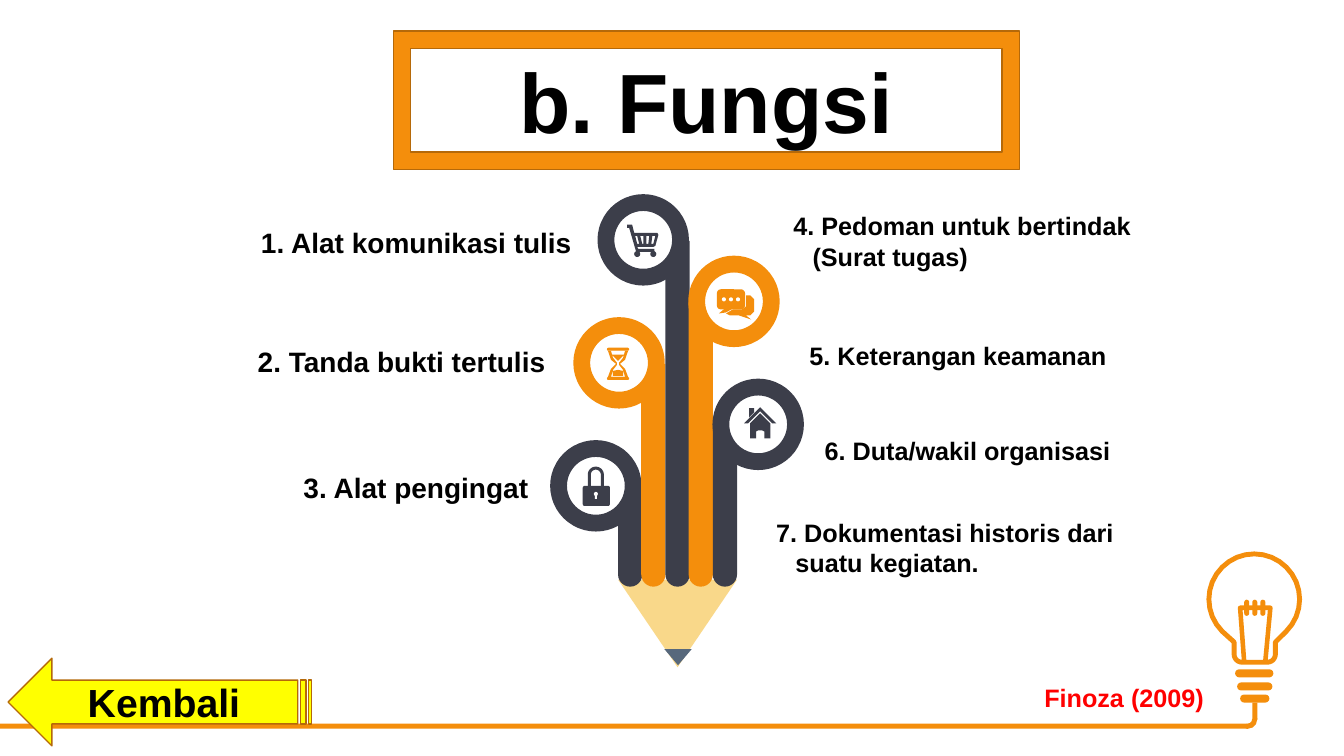
import math

import pptx
import pptx.dml.color
import pptx.enum.shapes
import pptx.enum.text
import pptx.oxml.ns
import pptx.util
from lxml import etree

RGB = pptx.dml.color.RGBColor
MSO = pptx.enum.shapes.MSO_SHAPE
ALIGN = pptx.enum.text.PP_ALIGN
ANCHOR = pptx.enum.text.MSO_ANCHOR
AUTO = pptx.enum.text.MSO_AUTO_SIZE

ORANGE = RGB(0xF4, 0x8E, 0x0C)
BROWN = RGB(0xB5, 0x69, 0x09)
DARK = RGB(0x3C, 0x3E, 0x4A)
WOOD = RGB(0xF5, 0xB3, 0x17)
LEAD = RGB(0x57, 0x68, 0x7C)
YELLOW = RGB(0xFF, 0xFF, 0x00)
RED = RGB(0xFF, 0x00, 0x00)
BLACK = RGB(0x00, 0x00, 0x00)
WHITE = RGB(0xFF, 0xFF, 0xFF)

PX = 9144  # 100 px to the inch


def arc(cx, cy, r, start, end, steps=24):
    """Points on a circle; angles in degrees, clockwise from the right."""
    angles = [math.radians(start + (end - start) * i / steps) for i in range(steps + 1)]
    return [(cx + r * math.cos(a), cy + r * math.sin(a)) for a in angles]


class Deck:
    font = "Arial"

    def __init__(self, width, height):
        self.prs = pptx.Presentation()
        self.prs.slide_width, self.prs.slide_height = width * PX, height * PX
        self.slide = self.prs.slides.add_slide(self.prs.slide_layouts[5])
        self.shapes = self.slide.shapes

    def paint(self, s, fill, line=None, width=1):
        s.shadow.inherit = False
        if fill is None:
            s.fill.background()
        else:
            s.fill.solid()
            s.fill.fore_color.rgb = fill
        if line is None:
            s.line.fill.background()
        else:
            s.line.color.rgb = line
            s.line.width = pptx.util.Pt(width)
        return s

    def shape(self, kind, box, fill, line=None, width=1, rot=0, adj=()):
        s = self.shapes.add_shape(kind, *(v * PX for v in box))
        s.rotation = rot
        for i, value in enumerate(adj):
            s.adjustments[i] = value
        return self.paint(s, fill, line, width)

    def pill(self, box, fill, round_=0.5):
        return self.shape(MSO.ROUNDED_RECTANGLE, box, fill, adj=[round_])

    def dot(self, cx, cy, r, fill):
        return self.shape(MSO.OVAL, (cx - r, cy - r, 2 * r, 2 * r), fill)

    def outline(self, contours, fill, line=None, width=1, close=True):
        contours = [[(10 * x, 10 * y) for x, y in c] for c in contours]
        fb = self.shapes.build_freeform(*contours[0][0], scale=PX / 10)
        for i, points in enumerate(contours):
            if i:
                fb.move_to(*points[0])
            fb.add_line_segments(points[1:], close=close)
        return self.paint(fb.convert_to_shape(), fill, line, width)

    def set_text(self, s, text, size, color=BLACK, align=ALIGN.CENTER, anchor=ANCHOR.MIDDLE):
        tf = s.text_frame
        tf.text = text
        tf.word_wrap = True
        tf.auto_size = AUTO.NONE
        tf.vertical_anchor = anchor
        p = tf.paragraphs[0]
        p.alignment = align
        f = p.runs[0].font
        f.name, f.size, f.bold = self.font, pptx.util.Pt(size), True
        f.color.rgb = color
        return p

    def title(self, text, box, size):
        s = self.shapes.title
        s.left, s.top, s.width, s.height = (v * PX for v in box)
        self.set_text(s, text, size)

    def label(self, text, box, size, color=BLACK, align=ALIGN.LEFT, hang=0):
        s = self.shapes.add_textbox(*(v * PX for v in box))
        pPr = self.set_text(s, text, size, color, align, ANCHOR.TOP)._p.get_or_add_pPr()
        pPr.set("marL", str(hang * PX))
        pPr.set("indent", str(-hang * PX))


def draw_bulb(d):
    glass = (arc(1244, 594.5, 45, 135, 405) + [(1265, 637)]
             + arc(1257, 649, 8, 0, 90, 6) + arc(1232, 649, 8, 90, 180, 6) + [(1224, 637)])
    d.outline([glass], WHITE, ORANGE, 3.5)
    for box in [(1225, 664, 38, 8), (1227, 677, 35, 8), (1230, 689, 29, 8)]:
        d.pill(box, ORANGE)
    d.outline([[(1234, 656), (1230, 603), (1260, 603), (1255, 656)]],
              None, ORANGE, 3.25, close=False)
    for i in range(3):
        d.pill((1234 + 8 * i, 595, 5, 16), ORANGE)
    # Cable
    d.shape(MSO.RECTANGLE, (0, 718, 1237, 5), ORANGE)
    d.shape(MSO.RECTANGLE, (1242, 697, 5, 17), ORANGE)
    d.shape(MSO.BLOCK_ARC, (1228, 704, 19, 19), ORANGE, adj=[213.394, 60.915, 0.271])


def draw_pencil(d):
    tip = d.shape(MSO.TRAPEZOID, (613, 575, 118, 87), WOOD, rot=180, adj=[0.789])
    color = tip.element.spPr.find(".//" + pptx.oxml.ns.qn("a:srgbClr"))
    etree.SubElement(color, pptx.oxml.ns.qn("a:alpha")).set("val", "50000")
    d.shape(MSO.ISOSCELES_TRIANGLE, (659, 644, 27, 16), LEAD, rot=180)
    # Stripes, each curling into a ring: left for the first three, then right
    for i, top in enumerate([483, 361, 239, 300, 422]):
        color = ORANGE if i % 2 else DARK
        x = 613 + 47 * i // 2
        d.shape(MSO.ROUND_2_SAME_RECTANGLE, (x, top, 24, 582 - top), color,
                rot=180, adj=[0.5, 0])
        ring_x = x - 59 if i < 3 else x + 8
        d.shape(MSO.OVAL, (ring_x, top - 38, 74, 74), WHITE, color, 12)


def draw_icons(d):
    # Chat
    d.outline([[(740, 293), (744, 293), (748, 297), (748, 309), (744, 313), (740, 313),
                (745, 317), (733, 313), (724, 313), (720, 311), (727, 307), (736, 307),
                (740, 304)]], ORANGE)
    d.pill((711, 287, 28, 20), ORANGE, 0.2)
    d.outline([[(719, 306), (727, 306), (720, 310), (713, 311)]], ORANGE)
    for i in range(3):
        d.dot(718 + 7 * i, 297, 2, WHITE)
    # Hourglass
    for y in (345, 374):
        d.pill((602, y, 22, 3), ORANGE)
    d.outline([
        [(603, 348), (606, 357), (611, 361), (606, 366), (603, 374),
         (623, 374), (620, 366), (615, 361), (620, 357), (623, 348)],
        [(606, 348), (608, 355), (612, 360), (612, 362), (608, 367), (606, 374),
         (620, 374), (618, 367), (614, 362), (614, 360), (618, 355), (620, 348)],
        [(607, 352), (619, 352), (613, 358)],
        [(608, 373), (608, 368), (613, 367), (618, 368), (618, 373)]], ORANGE)
    # Cart
    d.outline([
        [(622, 223), (627, 223), (629, 231), (652, 231), (653, 233), (650, 244),
         (648, 245), (632, 245), (633, 247), (649, 247), (649, 250), (631, 250),
         (624, 226), (622, 226)],
        [(630, 234), (632, 242), (634, 242), (632, 234)],
        [(635, 234), (637, 242), (638, 242), (638, 234)],
        [(641, 234), (641, 242), (643, 242), (644, 234)],
        [(647, 234), (646, 242), (648, 242), (650, 234)]], DARK)
    for x in (632, 648):
        d.dot(x, 252, 3, DARK)
    # House
    d.outline([
        [(754, 410), (764, 420), (764, 435), (758, 435), (758, 428), (756, 427),
         (752, 427), (750, 428), (750, 435), (744, 435), (744, 420)],
        [(743, 405), (748, 405), (748, 409), (743, 414)],
        [(754, 404), (770, 420), (766, 420), (754, 408), (742, 420), (738, 420)]], DARK)
    # Padlock
    d.pill((578, 482, 27, 20), DARK, 0.1)
    d.outline([[(583, 483)] + arc(591, 471, 8, 180, 360) + [(599, 483), (596, 483)]
               + arc(591, 471, 5, 360, 180) + [(586, 483)]], DARK)
    d.dot(591, 490, 2, WHITE)
    d.shape(MSO.RECTANGLE, (590, 491, 2, 4), WHITE)


def main():
    d = Deck(1333, 750)
    draw_bulb(d)
    draw_pencil(d)
    draw_icons(d)

    # Title in its frame
    d.shape(MSO.FRAME, (390, 31, 621, 137), ORANGE, BROWN)
    d.title("b. Fungsi", (407, 48, 587, 103), 60)

    # Back button
    back = d.shape(MSO.STRIPED_RIGHT_ARROW, (8, 653, 301, 87), YELLOW, BROWN)
    back.element.spPr.xfrm.set("flipH", "1")
    d.set_text(back, "Kembali", 28)

    # Functions on the left and on the right
    for text, x, y in [("1. Alat komunikasi tulis", 158, 219),
                       ("2. Tanda bukti tertulis", 132, 337),
                       ("3. Alat pengingat", 115, 462)]:
        d.label(text, (x, y, 419, 44), 20, align=ALIGN.RIGHT, hang=19)
    for text, x, y, h in [("4. Pedoman untuk bertindak (Surat tugas)", 777, 204, 71),
                          ("5. Keterangan keamanan", 793, 333, 40),
                          ("6. Duta/wakil organisasi", 808, 427, 40),
                          ("7. Dokumentasi historis dari suatu kegiatan.", 760, 508, 71)]:
        d.label(text, (x, y, 419, h), 18, hang=19)

    # Reference
    d.label("Finoza (2009)", (943, 672, 261, 40), 18, RED, ALIGN.RIGHT)
    d.prs.save("out.pptx")


if __name__ == "__main__":
    main()
